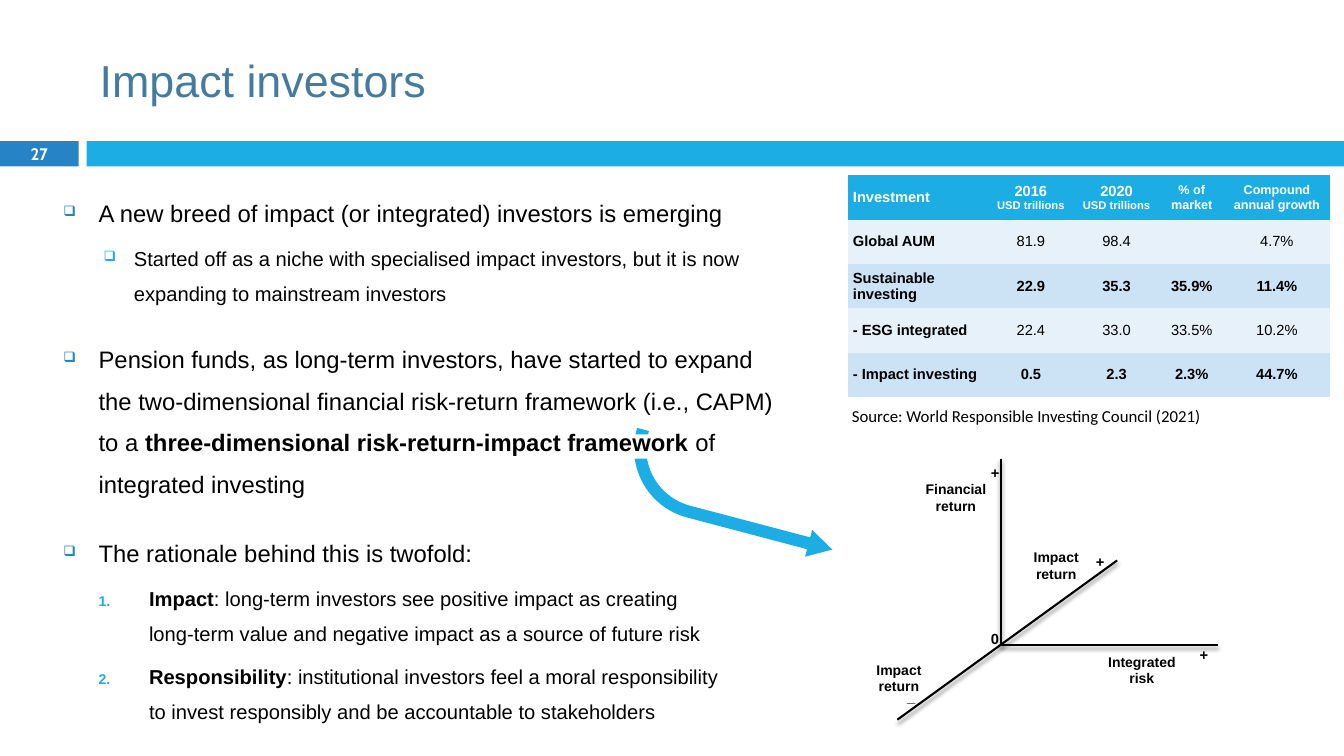
from copy import deepcopy

from lxml.etree import SubElement
from pptx import Presentation
from pptx.dml.color import RGBColor
from pptx.enum.shapes import MSO_CONNECTOR, MSO_SHAPE
from pptx.enum.text import MSO_ANCHOR, PP_ALIGN
from pptx.oxml import parse_xml
from pptx.oxml.ns import nsdecls, qn
from pptx.util import Inches, Pt

# Content
TITLE = "Impact investors"
PAGE = "27"
SOURCE = "Source: World Responsible Investing Council (2021)"

# (level style, space before, runs of (text, bold))
BODY = [
    ("point", 0, [("A new breed of impact (or integrated) investors is emerging", False)]),
    ("detail", 5.5, [("Started off as a niche with specialised impact investors, "
                      "but it is now expanding to mainstream investors", False)]),
    ("point", 18.5, [("Pension funds, as long-term investors, have started to expand "
                      "the two-dimensional financial risk-return framework (i.e., CAPM) to a ", False),
                     ("three-dimensional risk-return-impact framework ", True),
                     ("of integrated investing", False)]),
    ("point", 19.5, [("The rationale behind this is twofold:", False)]),
    ("reason", 5.5, [("Impact", True),
                     (": long-term investors see positive impact as creating \n"
                      "long-term value and negative impact as a source of future risk", False)]),
    ("reason", 5.5, [("Responsibility", True),
                     (": institutional investors feel a moral responsibility\n"
                      "to invest responsibly and be accountable to stakeholders", False)]),
]

# Header cells are (text, size) runs
HEADER = [
    [("Investment", 10.5)],
    [("2016\n", 10.5), ("USD trillions", 8)],
    [("2020\n", 10.5), ("USD trillions", 8)],
    [("% of market", 9)],
    [("Compound annual growth", 9)],
]
ROWS = [
    ("Global AUM", "81.9", "98.4", "", "4.7%"),
    ("Sustainable investing", "22.9", "35.3", "35.9%", "11.4%"),
    ("- ESG integrated", "22.4", "33.0", "33.5%", "10.2%"),
    ("- Impact investing", "0.5", "2.3", "2.3%", "44.7%"),
]
COLUMNS = (1.39, 0.85, 0.85, 0.64, 1.05)
ROW_HEIGHT = 0.44

# Diagram, in grid columns and rows of one inch
ORIGIN = (9.93, 6.4)
AXES = [((9.93, 4.55), ORIGIN), ((12.08, 6.4), ORIGIN), ((11.08, 5.56), (8.9, 7.14))]
AXIS_NAMES = [
    ("Integrated risk", (10.82, 6.43, 1.01, 0.44)),
    ("Financial return", (9.02, 4.72, 0.92, 0.44)),
    ("Impact return", (10.13, 5.39, 0.69, 0.39)),
    ("Impact return", (8.57, 6.51, 0.69, 0.39)),
]
AXIS_SIGNS = [("0", 9.73, 6.2), ("+", 10.77, 5.44), ("+", 9.73, 4.55),
              ("+", 11.8, 6.36), ("_", 8.9, 6.77)]
SIGN_BOX = (0.23, 0.26)

THEME = {
    "sky": "1CADE4", "blue": "2683C6", "title": "457B9E", "ink": "000000",
    "paper": "FFFFFF", "pale": "E7F1FA", "tint": "CCE3F5",
    "title_pt": 32, "page_pt": 11.9, "point_pt": 17, "detail_pt": 14.4,
    "source_pt": 12, "cell_pt": 10.5, "axis_pt": 10, "sign_pt": 10.5,
    "axis_line_pt": 1.5, "spacing": 1.46,
}
# Left margin, hanging indent, bullet colour, bullet size %, text size
LEVELS = {
    "point": (0.35, 0.35, "blue", 60, "point_pt"),
    "detail": (0.7, 0.3, "sky", 70, "detail_pt"),
    "reason": (0.85, 0.5, "sky", 70, "detail_pt"),
}
PLAIN_TABLE = "{2D5ABB26-0587-4C30-8999-92F81FD0307C}"

prs = Presentation()
prs.slide_width, prs.slide_height = Inches(13.33), Inches(7.5)
s = prs.slides.add_slide(prs.slide_layouts[6])


def rgb(name):
    return RGBColor.from_string(THEME[name])


def assign(obj, **values):
    for name, value in values.items():
        setattr(obj, name, value)


def grid(box):
    return [Inches(v) for v in box]


def add_run(p, text, size, color="ink", bold=False, font="Arial"):
    for i, part in enumerate(text.split("\n")):
        if i:
            p.add_line_break()
            p._p[-1].append(deepcopy(r._r.rPr))
        if part:
            r = p.add_run()
            r.text = part
            assign(r.font, size=Pt(size), bold=bold, name=font)
            r.font.color.rgb = rgb(color)


def add_text(text, box, size, color="ink", bold=False, font="Arial",
             align=PP_ALIGN.LEFT, anchor=MSO_ANCHOR.TOP):
    tf = s.shapes.add_textbox(*grid(box)).text_frame
    assign(tf, word_wrap=True, vertical_anchor=anchor)
    p = tf.paragraphs[0]
    p.alignment = align
    if text:
        add_run(p, text, size, color, bold, font)
    return tf


def add_block(kind, box, color):
    sp = s.shapes.add_shape(kind, *grid(box))
    sp.shadow.inherit = False
    sp.fill.solid()
    sp.fill.fore_color.rgb = rgb(color)
    sp.line.fill.background()
    return sp


def set_bullet(p, level):
    left, hang, color, share, _ = LEVELS[level]
    pPr = p._p.get_or_add_pPr()
    pPr.set("marL", str(Inches(left)))
    pPr.set("indent", str(-Inches(hang)))
    SubElement(SubElement(pPr, qn("a:buClr")), qn("a:srgbClr"), val=THEME[color])
    SubElement(pPr, qn("a:buSzPct"), val=str(share * 1000))
    if level == "reason":
        SubElement(pPr, qn("a:buFont"), typeface="+mj-lt")
        SubElement(pPr, qn("a:buAutoNum"), type="arabicPeriod")
    else:
        SubElement(pPr, qn("a:buChar"), char="❑")


# Header band, page number and title
add_block(MSO_SHAPE.RECTANGLE, (0, 1.4, 0.78, 0.25), "blue")
add_block(MSO_SHAPE.RECTANGLE, (0.86, 1.4, 12.47, 0.25), "sky")

# Arrow from the framework to the diagram, with its tail trimmed flat
arrow = add_block(MSO_SHAPE.BENT_ARROW, (6.18, 4.51, 2.18, 0.81), "sky")
for i, value in enumerate((0.15, 0.17, 0.3, 0.87)):
    arrow.adjustments[i] = value
arrow.rotation = 14.8
arrow.element.spPr.find(qn("a:xfrm")).set("flipV", "1")
add_block(MSO_SHAPE.RECTANGLE, (6.29, 4.31, 0.38, 0.24), "paper")

add_text(TITLE, (0.89, 0.25, 11.89, 1.08), THEME["title_pt"], "title",
         anchor=MSO_ANCHOR.MIDDLE)
add_text(PAGE, (0, 1.39, 0.78, 0.27), THEME["page_pt"], "paper", True, "Cabin",
         PP_ALIGN.CENTER, MSO_ANCHOR.MIDDLE)

# Body text
tf = add_text("", (0.53, 1.79, 7.36, 5.35), THEME["point_pt"])
for i, (level, before, runs) in enumerate(BODY):
    p = tf.add_paragraph() if i else tf.paragraphs[0]
    assign(p, line_spacing=THEME["spacing"], space_before=Pt(before),
           level=0 if level == "point" else 1)
    set_bullet(p, level)
    for text, bold in runs:
        add_run(p, text, THEME[LEVELS[level][-1]], bold=bold)

# Diagram axes
for start, end in AXES:
    line = s.shapes.add_connector(MSO_CONNECTOR.STRAIGHT, *grid(start + end))
    line.line.color.rgb = rgb("ink")
    line.line.width = Pt(THEME["axis_line_pt"])
    line.element.spPr.append(parse_xml(
        f'<a:effectLst {nsdecls("a")}><a:outerShdw blurRad="{Pt(3)}" dist="{Pt(2.4)}" '
        f'dir="5400000" rotWithShape="0"><a:srgbClr val="{THEME["ink"]}">'
        '<a:alpha val="45000"/></a:srgbClr></a:outerShdw></a:effectLst>'))

# Diagram labels
for text, box in AXIS_NAMES:
    add_text(text, box, THEME["axis_pt"], bold=True, align=PP_ALIGN.CENTER)
for text, x, y in AXIS_SIGNS:
    add_text(text, (x, y, *SIGN_BOX), THEME["sign_pt"], bold=True, align=PP_ALIGN.CENTER)

# Market table
size = (sum(COLUMNS), ROW_HEIGHT * (len(ROWS) + 1))
frame = s.shapes.add_table(len(ROWS) + 1, len(COLUMNS), *grid((8.41, 1.74, *size)))
table = frame.table
table._tbl.tblPr.find(qn("a:tableStyleId")).text = PLAIN_TABLE
for column, width in zip(table.columns, COLUMNS):
    column.width = Inches(width)
body_rows = [[[(text, THEME["cell_pt"])] for text in row] for row in ROWS]
for i, row in enumerate([HEADER] + body_rows):
    table.rows[i].height = Inches(ROW_HEIGHT)
    fill = "sky" if i == 0 else "pale" if i % 2 else "tint"
    for j, runs in enumerate(row):
        cell = table.cell(i, j)
        cell.fill.solid()
        cell.fill.fore_color.rgb = rgb(fill)
        assign(cell, vertical_anchor=MSO_ANCHOR.MIDDLE, margin_left=Inches(0.05),
               margin_right=Inches(0.05), margin_top=0, margin_bottom=0)
        p = cell.text_frame.paragraphs[0]
        assign(p, alignment=PP_ALIGN.CENTER if j else PP_ALIGN.LEFT,
               space_before=Pt(2), space_after=Pt(2))
        for text, pt in runs:
            add_run(p, text, pt, "ink" if i else "paper", bold=j == 0 or i % 2 == 0)

add_text(SOURCE, (8.35, 3.98, 3.95, 0.3), THEME["source_pt"], font="Calibri",
         align=PP_ALIGN.JUSTIFY)

prs.save("out.pptx")
